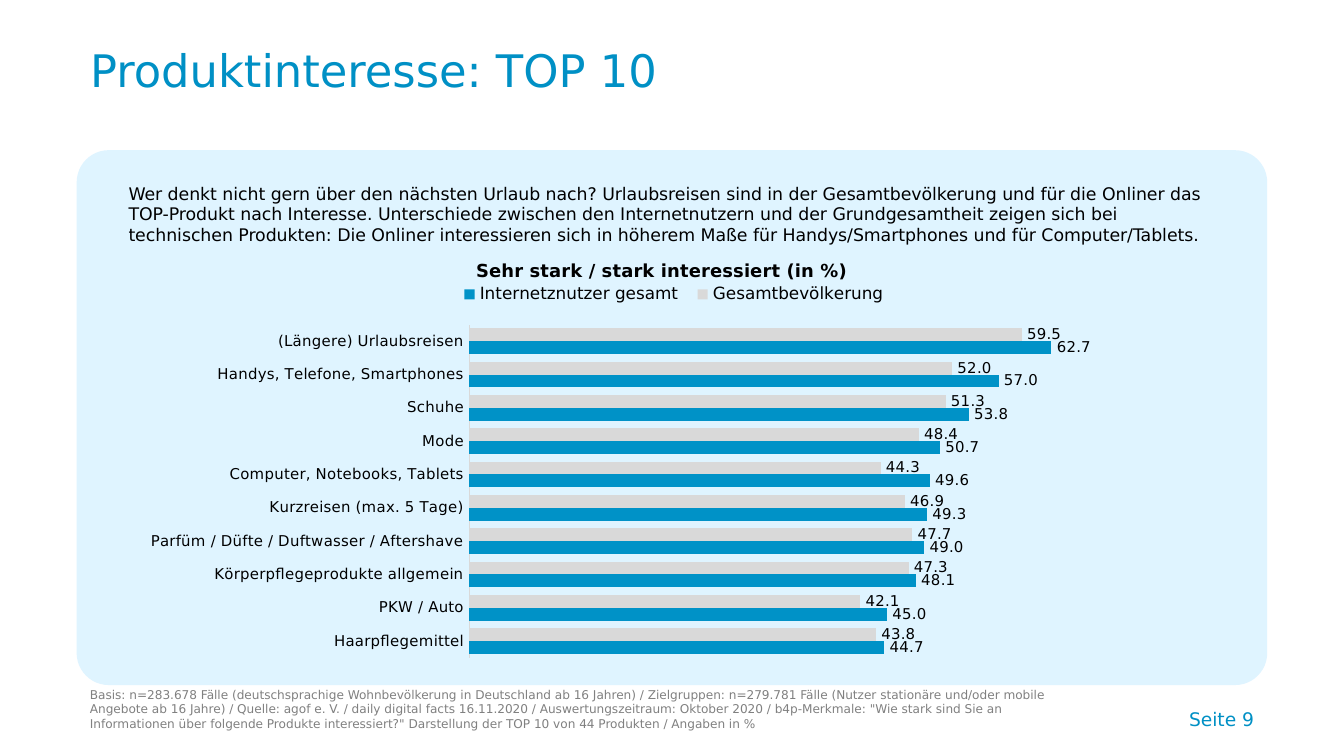
import pptx
import pptx.chart.data
import pptx.dml.color
import pptx.enum.chart
import pptx.enum.shapes
import pptx.enum.text
import pptx.oxml
import pptx.oxml.ns
import pptx.util

COLOURS = {
    "panel": "DFF4FF",
    "accent": "0090C5",
    "online": "0092C7",
    "population": "D9D9D9",
    "text": "000000",
    "source": "808080",
}
FONT = "DejaVu Sans"
TITLE = "Produktinteresse: TOP 10"
INTRO = (
    "Wer denkt nicht gern über den nächsten Urlaub nach? Urlaubsreisen sind in der "
    "Gesamtbevölkerung und für die Onliner das TOP-Produkt nach Interesse. Unterschiede "
    "zwischen den Internetnutzern und der Grundgesamtheit zeigen sich bei technischen "
    "Produkten: Die Onliner interessieren sich in höherem Maße für Handys/Smartphones "
    "und für Computer/Tablets."
)
SOURCE = (
    "Basis: n=283.678 Fälle (deutschsprachige Wohnbevölkerung in Deutschland ab 16 Jahren) / "
    "Zielgruppen: n=279.781 Fälle (Nutzer stationäre und/oder mobile Angebote ab 16 Jahre) / "
    "Quelle: agof e. V. / daily digital facts 16.11.2020 / Auswertungszeitraum: Oktober 2020 / "
    'b4p-Merkmale: "Wie stark sind Sie an Informationen über folgende Produkte interessiert?" '
    "Darstellung der TOP 10 von 44 Produkten / Angaben in %"
)
INTERESTS = [
    ("(Längere) Urlaubsreisen", 59.5, 62.7),
    ("Handys, Telefone, Smartphones", 52, 57),
    ("Schuhe", 51.3, 53.8),
    ("Mode", 48.4, 50.7),
    ("Computer, Notebooks, Tablets", 44.3, 49.6),
    ("Kurzreisen (max. 5 Tage)", 46.9, 49.3),
    ("Parfüm / Düfte / Duftwasser / Aftershave", 47.7, 49),
    ("Körperpflegeprodukte allgemein", 47.3, 48.1),
    ("PKW / Auto", 42.1, 45),
    ("Haarpflegemittel", 43.8, 44.7),
]
SERIES = [("Gesamtbevölkerung", "population"), ("Internetznutzer gesamt", "online")]
ANCHOR = pptx.enum.text.MSO_ANCHOR
ALIGN = pptx.enum.text.PP_ALIGN


def colour(name):
    """Return the named colour."""
    return pptx.dml.color.RGBColor.from_string(COLOURS[name])


def lengths(*values):
    """Return centimetre values as lengths."""
    return [pptx.util.Cm(value) for value in values]


def apply(target, values):
    """Set each attribute of the target from a dict."""
    for name, value in values.items():
        setattr(target, name, value)


def style_font(font, size, name="text", bold=False):
    """Give a font its face, size, weight and colour."""
    apply(font, {"name": FONT, "size": pptx.util.Pt(size), "bold": bold})
    font.color.rgb = colour(name)


def fill_text(box, text, size, name, anchor, align=ALIGN.LEFT, spacing=None):
    """Write one formatted paragraph into a box."""
    frame = box.text_frame
    frame.text = text
    apply(frame, {
        "word_wrap": True,
        "auto_size": pptx.enum.text.MSO_AUTO_SIZE.NONE,
        "vertical_anchor": anchor,
    })
    para = frame.paragraphs[0]
    apply(para, {"alignment": align, "line_spacing": spacing})
    style_font(para.runs[0].font, size, name)


def add_text(page, place, *style):
    """Add a text box with one paragraph."""
    fill_text(page.shapes.add_textbox(*lengths(*place)), *style)


def add_title(page):
    """Move and format the title placeholder."""
    title = page.shapes.title
    place = lengths(1.45, 0.71, 18.62, 1.42)
    apply(title, dict(zip(("left", "top", "width", "height"), place)))
    fill_text(title, TITLE, 24, "accent", ANCHOR.MIDDLE, ALIGN.LEFT, 0.8)


def add_panel(page):
    """Add the rounded panel behind the content."""
    kind = pptx.enum.shapes.MSO_SHAPE.ROUNDED_RECTANGLE
    panel = page.shapes.add_shape(kind, *lengths(1.45, 2.84, 22.5, 10.11))
    panel.adjustments[0] = 0.06
    panel.shadow.inherit = False
    panel.fill.solid()
    panel.fill.fore_color.rgb = colour("panel")
    panel.line.fill.background()


def set_layout(element, index, target=None, **parts):
    """Place a chart part by fractions of the chart area."""
    for old in element.findall(pptx.oxml.ns.qn("c:layout")):
        element.remove(old)
    inner = f'<c:layoutTarget val="{target}"/>' if target else ""
    inner += '<c:xMode val="edge"/><c:yMode val="edge"/>'
    inner += "".join(f'<c:{key} val="{value}"/>' for key, value in parts.items())
    space = pptx.oxml.ns.nsdecls("c")
    element.insert(index, pptx.oxml.parse_xml(
        f"<c:layout {space}><c:manualLayout>{inner}</c:manualLayout></c:layout>"))


def style_axes(chart):
    """Format the category axis and hide the value axis."""
    enums = pptx.enum.chart
    axis = chart.category_axis
    apply(axis, {
        "reverse_order": True,
        "has_major_gridlines": False,
        "major_tick_mark": enums.XL_TICK_MARK.NONE,
        "minor_tick_mark": enums.XL_TICK_MARK.NONE,
    })
    style_font(axis.tick_labels.font, 8)
    axis.format.line.color.rgb = colour("population")
    axis.format.line.width = pptx.util.Pt(0.75)
    apply(chart.value_axis, {
        "minimum_scale": 0,
        "maximum_scale": 80,
        "has_major_gridlines": False,
        "visible": False,
    })


def style_series(series, name):
    """Fill the bars of a series and label them."""
    series.format.fill.solid()
    series.format.fill.fore_color.rgb = colour(name)
    labels = series.data_labels
    apply(labels, {
        "show_value": True,
        "number_format": "#,##0.0",
        "number_format_is_linked": False,
        "position": pptx.enum.chart.XL_LABEL_POSITION.OUTSIDE_END,
    })
    style_font(labels.font, 8)


def add_interest_chart(page):
    """Add the bar chart of the ten top interests."""
    enums = pptx.enum.chart
    names, *columns = zip(*INTERESTS)
    data = pptx.chart.data.CategoryChartData(number_format="#,##0.0")
    data.categories = names
    for (name, _), values in zip(SERIES, columns):
        data.add_series(name, values)
    chart = page.shapes.add_chart(
        enums.XL_CHART_TYPE.BAR_CLUSTERED, *lengths(2.18, 4.5, 21.11, 8.18), data).chart
    style_font(chart.font, 8)
    frame = chart.chart_title.text_frame
    frame.text = "Sehr stark / stark interessiert (in %)"
    style_font(frame.paragraphs[0].runs[0].font, 9.6, bold=True)
    chart.has_legend = True
    apply(chart.legend, {
        "position": enums.XL_LEGEND_POSITION.TOP, "include_in_layout": False})
    style_font(chart.legend.font, 9)
    style_axes(chart)
    plot = chart.plots[0]
    apply(plot, {"gap_width": 60, "overlap": 0, "vary_by_categories": False})
    for series, (_, name) in zip(plot.series, SERIES):
        style_series(series, name)
    root = chart.element
    set_layout(root.find(".//" + pptx.oxml.ns.qn("c:plotArea")), 0, "inner",
               x=0.317, y=0.2, w=0.665, h=0.77)
    set_layout(root.find(".//" + pptx.oxml.ns.qn("c:title")), 1, x=0.32, y=0.04)
    set_layout(root.find(".//" + pptx.oxml.ns.qn("c:legend")), 1,
               x=0.3, y=0.09, w=0.4, h=0.08)


def main():
    """Build the slide and save the deck."""
    deck = pptx.Presentation()
    deck.slide_width, deck.slide_height = lengths(25.4, 14.29)
    page = deck.slides.add_slide(deck.slide_layouts.get_by_name("Title Only"))
    add_panel(page)
    add_title(page)
    add_interest_chart(page)
    add_text(page, (2.18, 3.33, 21.11, 1.6), INTRO, 9.3, "text", ANCHOR.TOP)
    add_text(page, (1.45, 12.95, 18.85, 0.99), SOURCE, 6.5, "source", ANCHOR.BOTTOM)
    add_text(page, (16.61, 12.95, 7.34, 0.97), "Seite 9", 10, "accent",
             ANCHOR.BOTTOM, ALIGN.RIGHT)
    deck.save("out.pptx")


if __name__ == "__main__":
    main()
